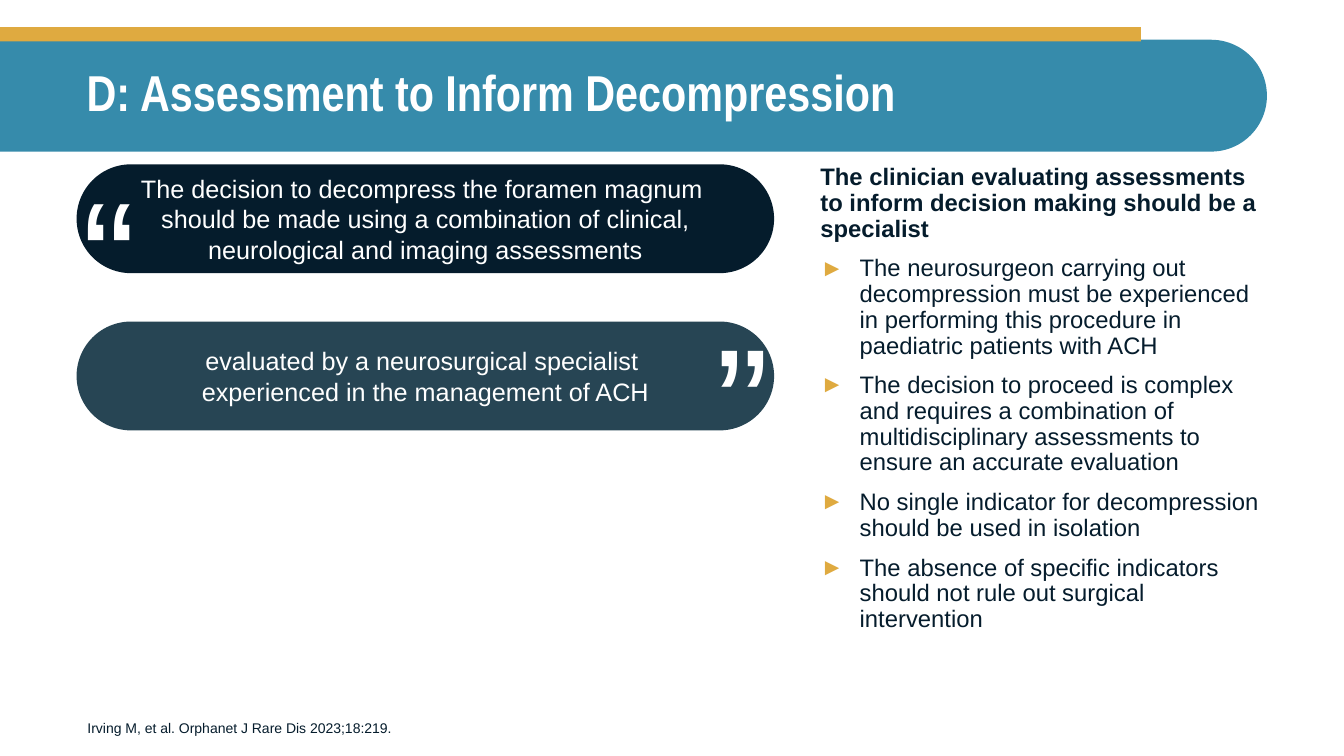
from lxml.etree import SubElement
from pptx import Presentation
from pptx.dml.color import RGBColor
from pptx.enum.shapes import MSO_SHAPE as Shape
from pptx.enum.text import MSO_ANCHOR as Anchor, PP_ALIGN as Align
from pptx.oxml.ns import qn
from pptx.util import Inches, Pt

NAVY, SLATE, TEAL, GOLD, WHITE = "051C2C", "274554", "368BAB", "DFAA40", "FFFFFF"
LEFT, PILL_WIDTH, PILL_HEIGHT = 5.7, 51.9, 14.4
QUOTES = [
    ("The decision to decompress the foramen magnum ",
     "should be made using a combination of clinical, neurological and imaging assessments",
     21.73, NAVY),
    ("evaluated by a neurosurgical specialist ",
     "experienced in the management of ACH", 42.53, SLATE),
]
MARKS = [(5.4, 19.73, 0), (52.43, 31.33, 180)]
HEADING = ("The clinician evaluating assessments to inform decision making "
           "should be a specialist")
POINTS = [
    "The neurosurgeon carrying out decompression must be experienced in performing "
    "this procedure in paediatric patients with ACH",
    "The decision to proceed is complex and requires a combination of "
    "multidisciplinary assessments to ensure an accurate evaluation",
    "No single indicator for decompression should be used in isolation",
    "The absence of specific indicators should not rule out surgical intervention",
]


def colour(value):
    """Turn a hex string into a colour."""
    return RGBColor.from_string(value)


class SlideBuilder:
    """Hold the style and the current slide; lengths are percentages of its size."""

    def __init__(self, presentation, font="Arial"):
        """Add a title-only slide."""
        self.width, self.height = presentation.slide_width, presentation.slide_height
        self.slide = presentation.slides.add_slide(presentation.slide_layouts[5])
        self.font = font

    def box(self, left, top, width, height):
        """Convert percentages to slide lengths."""
        return (round(self.width * left / 100), round(self.height * top / 100),
                round(self.width * width / 100), round(self.height * height / 100))

    def styled_run(self, paragraph, text, size, ink, bold=False, font=None):
        """Add one styled run."""
        run = paragraph.add_run()
        run.text = text
        run.font.size, run.font.bold = Pt(size), bold
        run.font.name = font or self.font
        run.font.color.rgb = colour(ink)

    def shape(self, kind, place, fill, adjustments=()):
        """Add a filled shape without outline or shadow."""
        shape = self.slide.shapes.add_shape(kind, *self.box(*place))
        shape.shadow.inherit = False
        shape.fill.solid()
        shape.fill.fore_color.rgb = colour(fill)
        shape.line.fill.background()
        for index, value in enumerate(adjustments):
            shape.adjustments[index] = value
        return shape

    def banner(self, place, fill):
        """Add a band with a round right end, as a turned shape."""
        shape = self.shape(Shape.ROUND_2_SAME_RECTANGLE, place, fill, (0, 0.5))
        width, height = shape.width, shape.height
        shift = (width - height) // 2
        shape.left, shape.top = shape.left + shift, shape.top - shift
        shape.width, shape.height = height, width
        shape.rotation = 270

    def title(self, text, place):
        """Fill the title placeholder and bring it to the front."""
        title = self.slide.shapes.title
        title.left, title.top, title.width, title.height = self.box(*place)
        self.slide.shapes.element.append(title.element)
        title.text_frame.vertical_anchor = Anchor.MIDDLE
        title.text_frame.word_wrap = True
        paragraph = title.text_frame.paragraphs[0]
        paragraph.alignment, paragraph.line_spacing = Align.LEFT, 0.9
        self.styled_run(paragraph, text, 36, WHITE, True, "Arial Narrow")

    def pill(self, first, second, place, fill):
        """Add a rounded statement of two parts."""
        frame = self.shape(Shape.ROUNDED_RECTANGLE, place, fill, (0.5,)).text_frame
        frame.word_wrap, frame.vertical_anchor = True, Anchor.MIDDLE
        paragraph = frame.paragraphs[0]
        paragraph.alignment = Align.CENTER
        self.styled_run(paragraph, first, 18, WHITE)
        paragraph.add_line_break()
        self.styled_run(paragraph, second, 18, WHITE)

    def text(self, text, place, size, ink, bold=False, wrap=True, anchor=Anchor.TOP):
        """Add a text box with one paragraph."""
        box = self.slide.shapes.add_textbox(*self.box(*place))
        box.text_frame.word_wrap, box.text_frame.vertical_anchor = wrap, anchor
        self.styled_run(box.text_frame.paragraphs[0], text, size, ink, bold)
        return box

    def points(self, heading, points, place):
        """Add a bold heading with a bulleted list below it."""
        frame = self.text(heading, place, 17, NAVY, True).text_frame
        frame.paragraphs[0].line_spacing = 0.9
        for point in points:
            paragraph = frame.add_paragraph()
            paragraph.line_spacing, paragraph.space_before = 0.9, Pt(10)
            properties = paragraph._p.get_or_add_pPr()
            properties.set("marL", str(Inches(0.39)))
            properties.set("indent", str(-Inches(0.39)))
            tint = SubElement(properties, qn("a:buClr"))
            SubElement(tint, qn("a:srgbClr"), val=GOLD)
            SubElement(properties, qn("a:buFont"), typeface=self.font)
            SubElement(properties, qn("a:buChar"), char="►")
            self.styled_run(paragraph, point, 17, NAVY)


def main():
    """Build and save the slide."""
    presentation = Presentation()
    presentation.slide_width, presentation.slide_height = Inches(13.33), Inches(7.5)
    builder = SlideBuilder(presentation)
    builder.banner((0, 5.25, 94.27, 14.8), TEAL)
    builder.shape(Shape.RECTANGLE, (0, 3.6, 84.9, 1.87), GOLD)
    builder.title("D: Assessment to Inform Decompression", (LEFT, 5.25, 88.6, 14.6))
    builder.points(HEADING, POINTS, (60.3, 21.2, 34.8, 66.1))
    builder.text("Irving M, et al. Orphanet J Rare Dis 2023;18:219.",
                 (5.77, 90.5, 74.1, 7.5), 10, NAVY, anchor=Anchor.BOTTOM)
    for (first, second, top, fill), (left, mark_top, turn) in zip(QUOTES, MARKS):
        builder.pill(first, second, (LEFT, top, PILL_WIDTH, PILL_HEIGHT), fill)
        mark = builder.text("“", (left, mark_top, 5.55, 27.2), 115, WHITE, wrap=False)
        mark.rotation = turn
    presentation.save("out.pptx")


if __name__ == "__main__":
    main()
